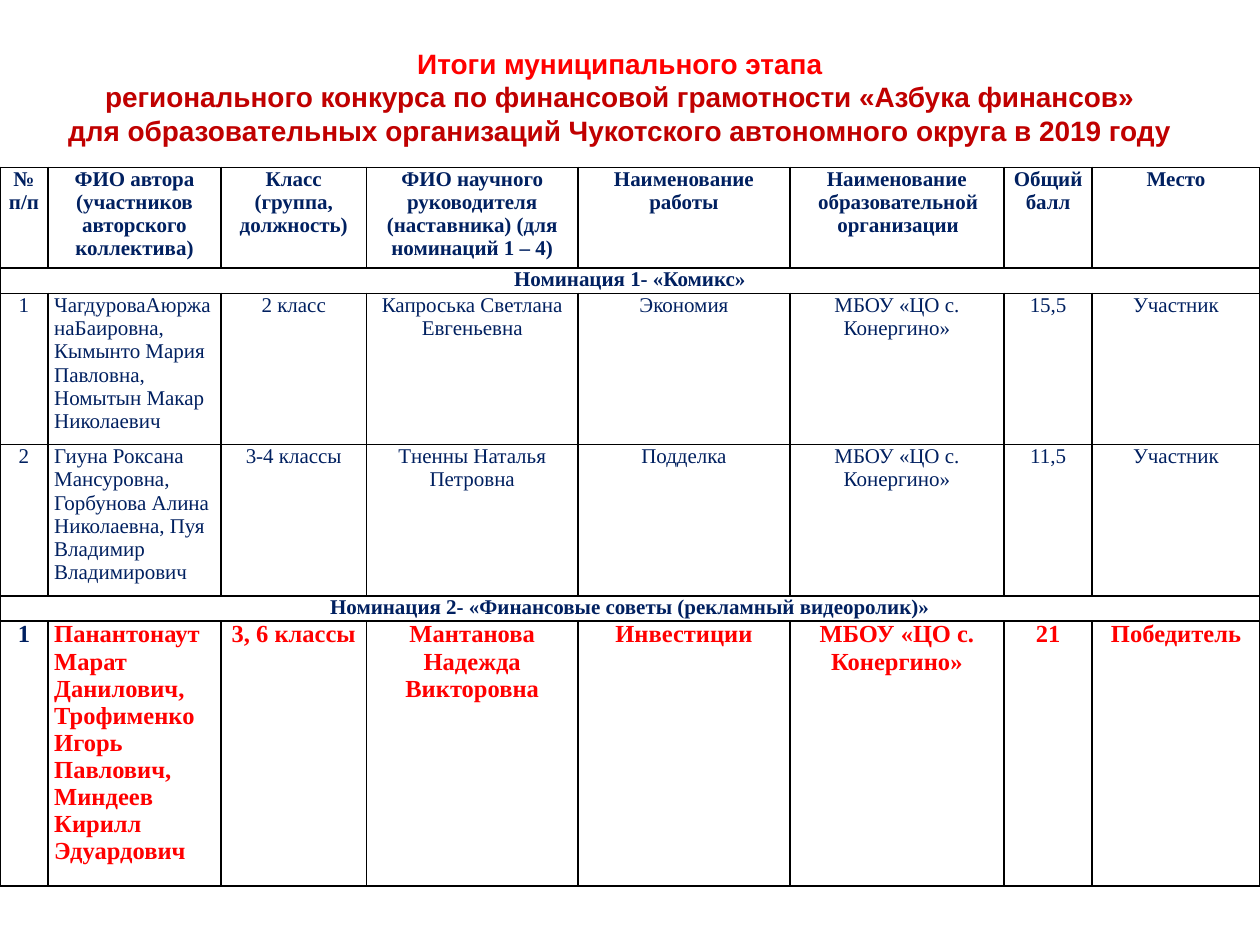
from lxml import etree
from pptx import Presentation
from pptx.dml.color import RGBColor
from pptx.enum.text import MSO_ANCHOR, MSO_AUTO_SIZE, PP_ALIGN
from pptx.oxml.ns import qn
from pptx.util import Pt

CENTER, LEFT = PP_ALIGN.CENTER, PP_ALIGN.LEFT
MIDDLE, TOP = MSO_ANCHOR.MIDDLE, MSO_ANCHOR.TOP
FIT_SHAPE = MSO_AUTO_SIZE.SHAPE_TO_FIT_TEXT

COLORS = {"red": "FF0000", "dark_red": "C00000", "navy": "002060", "border": "000000"}

HEADING = [
    ("Итоги муниципального этапа", "red"),
    ("регионального конкурса по финансовой грамотности «Азбука финансов»", "dark_red"),
    ("для образовательных организаций Чукотского автономного округа в 2019 году", "dark_red"),
]

SCHOOL = "МБОУ «ЦО с. Конергино»"
AUTHOR_COLUMN, SCHOOL_COLUMN = 1, 5
COLUMN_WIDTHS = [27.4, 99, 83, 121, 121, 122.4, 50.4, 95.8]

# Each row: kind, height, cell texts
RESULTS = [
    ("header", 57.6, ["№ п/п", "ФИО автора (участников авторского коллектива)",
                      "Класс (группа, должность)",
                      "ФИО научного руководителя (наставника) (для номинаций 1 – 4)",
                      "Наименование работы", "Наименование образовательной организации",
                      "Общий балл", "Место"]),
    ("nomination", 14.3, ["Номинация 1- «Комикс»"]),
    ("entry", 86.4, ["1", "ЧагдуроваАюржанаБаировна, Кымынто Мария Павловна, "
                     "Номытын Макар Николаевич", "2 класс", "Капроська Светлана Евгеньевна",
                     "Экономия", SCHOOL, "15,5", "Участник"]),
    ("entry", 86.4, ["2", "Гиуна Роксана Мансуровна, Горбунова Алина Николаевна, "
                     "Пуя Владимир Владимирович", "3-4 классы", "Тненны Наталья Петровна",
                     "Подделка", SCHOOL, "11,5", "Участник"]),
    ("nomination", 14.3, ["Номинация 2- «Финансовые советы (рекламный видеоролик)»"]),
    ("winner", 151.4, ["1", "Панантонаут Марат Данилович, Трофименко Игорь Павлович, "
                       "Миндеев Кирилл Эдуардович", "3, 6 классы",
                       "Мантанова Надежда Викторовна", "Инвестиции", SCHOOL, "21",
                       "Победитель"]),
]


def format_font(font, name, size, color, bold):
    font.name = name
    font.size = Pt(size)
    font.bold = bold
    font.color.rgb = RGBColor.from_string(COLORS[color])


def add_borders(cell):
    properties = cell._tc.get_or_add_tcPr()
    for position, side in enumerate(("a:lnL", "a:lnR", "a:lnT", "a:lnB")):
        line = etree.Element(qn(side), w=str(Pt(1)))
        fill = etree.SubElement(line, qn("a:solidFill"))
        etree.SubElement(fill, qn("a:srgbClr"), val=COLORS["border"])
        properties.insert(position, line)


def fill_heading(heading, left, top, width, height):
    heading.left, heading.top = Pt(left), Pt(top)
    heading.width, heading.height = Pt(width), Pt(height)
    frame = heading.text_frame
    frame.text = "\n".join(text for text, _ in HEADING)
    frame.word_wrap = False
    frame.auto_size = FIT_SHAPE
    frame.vertical_anchor = MIDDLE
    for paragraph, (_, color) in zip(frame.paragraphs, HEADING):
        paragraph.alignment = CENTER
        format_font(paragraph.runs[0].font, "Arial", 16, color, True)


def fill_cell(cell, text, kind, column):
    cell.margin_left = cell.margin_right = Pt(3.6)
    cell.margin_top = cell.margin_bottom = Pt(0)
    cell.vertical_anchor = TOP
    cell.text_frame.text = text
    paragraph = cell.text_frame.paragraphs[0]
    is_author = column == AUTHOR_COLUMN and kind != "header"
    paragraph.alignment = LEFT if is_author else CENTER
    if kind == "header" and column == SCHOOL_COLUMN:
        indent = paragraph._p.get_or_add_pPr()
        indent.set("marL", str(Pt(1.4)))
        indent.set("indent", str(-Pt(1.4)))
    color = "red" if kind == "winner" and column > 0 else "navy"
    size = 14 if kind == "winner" else 12
    format_font(paragraph.runs[0].font, "Times New Roman", size, color, kind != "entry")


def add_results(slide, left, top, width, height):
    frame = slide.shapes.add_table(len(RESULTS), len(COLUMN_WIDTHS),
                                   Pt(left), Pt(top), Pt(width), Pt(height))
    table = frame.table
    table.horz_banding = False
    for column, column_width in zip(table.columns, COLUMN_WIDTHS):
        column.width = Pt(column_width)
    for number, (kind, row_height, texts) in enumerate(RESULTS):
        table.rows[number].height = Pt(row_height)
        cells = list(table.rows[number].cells)
        for cell in cells:
            cell.fill.background()
            add_borders(cell)
            cell.margin_top = cell.margin_bottom = Pt(0)
        if kind == "nomination":
            cells[0].merge(cells[-1])
        for column, text in enumerate(texts):
            fill_cell(cells[column], text, kind, column)


def main():
    presentation = Presentation()
    presentation.slide_width, presentation.slide_height = Pt(720), Pt(540)
    slide = presentation.slides.add_slide(presentation.slide_layouts[5])
    # Contest heading
    fill_heading(slide.shapes.title, 28, 22.6, 652.4, 65.4)
    # Results table
    add_results(slide, 0, 95.6, 720, sum(height for _, height, _ in RESULTS))
    presentation.save("out.pptx")


if __name__ == "__main__":
    main()
